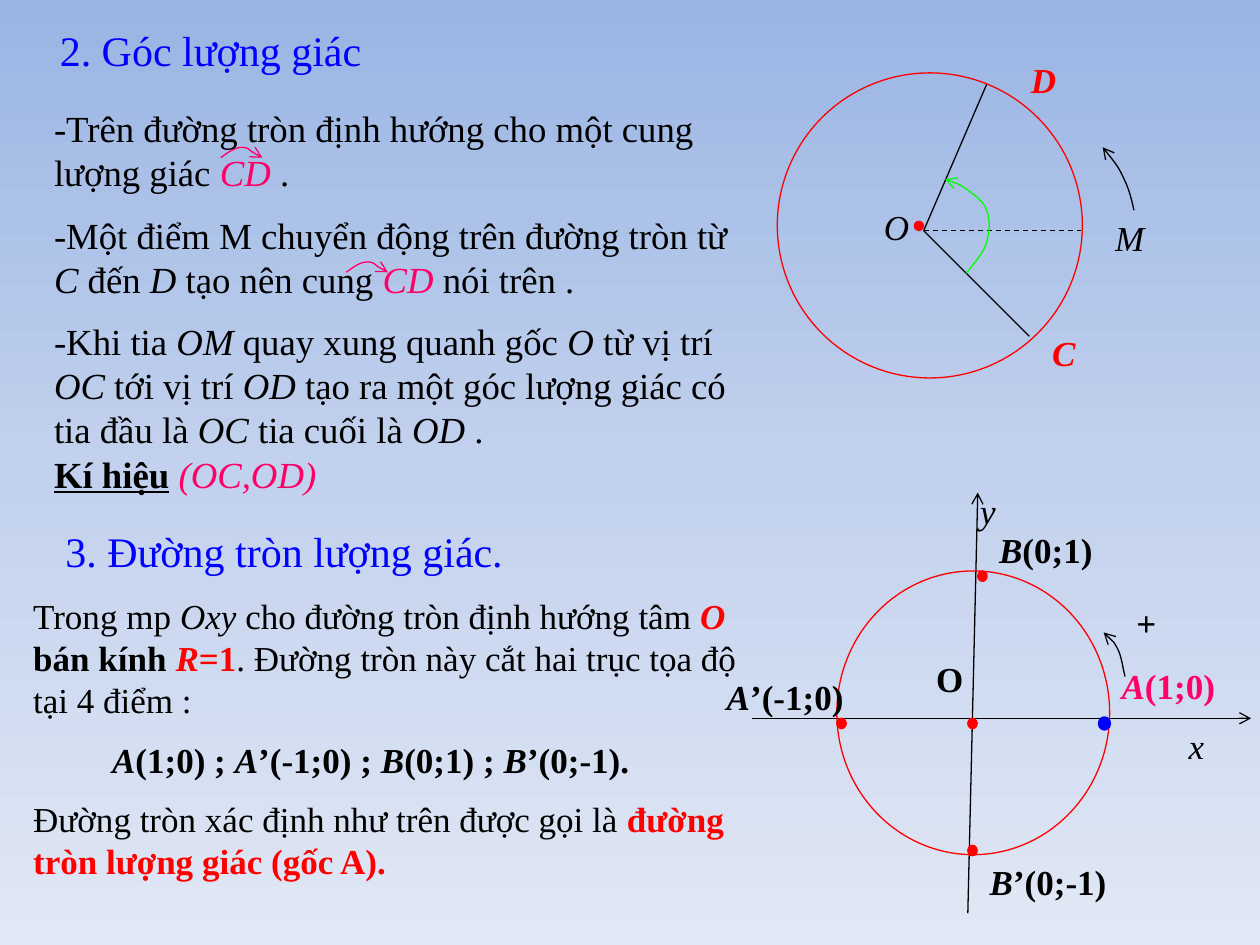
"""Build the slide on trigonometric angles and the unit circle."""
from copy import deepcopy
from dataclasses import dataclass
from typing import NamedTuple, Optional

from lxml import etree
from pptx import Presentation
from pptx.dml.color import RGBColor
from pptx.enum import dml, shapes, text
from pptx.oxml import ns
from pptx import util as u

BLACK = RGBColor(0x00, 0x00, 0x00)
BLUE = RGBColor(0x00, 0x00, 0xFF)
RED = RGBColor(0xFF, 0x00, 0x00)
PINK = RGBColor(0xFF, 0x00, 0x66)
GREEN = RGBColor(0x00, 0xFF, 0x00)
SKY = (RGBColor(0x9A, 0xB5, 0xE4), RGBColor(0xC2, 0xD1, 0xED), RGBColor(0xE1, 0xE8, 0xF5))
FONT = "Times New Roman"


class Run(NamedTuple):
    text: str
    color: RGBColor = BLACK
    bold: bool = False
    italic: bool = False
    underline: bool = False


@dataclass
class Block:
    left: float
    top: float
    width: float
    height: float
    paragraphs: list
    size: float = 20
    centered: bool = False


@dataclass
class Ellipse:
    left: float
    top: float
    width: float
    height: float
    fill: Optional[RGBColor] = None
    line: Optional[RGBColor] = RED
    weight: float = 0.75


@dataclass
class Segment:
    start: tuple
    end: tuple
    arrow: bool = False
    dashed: bool = False


@dataclass
class Curve:
    points: list
    color: RGBColor = BLACK


def var(letters: str, color: RGBColor = BLACK, bold: bool = False) -> Run:
    return Run(letters, color, bold, italic=True)


def strong(words: str, color: RGBColor = BLACK) -> Run:
    return Run(words, color, bold=True)


def point(name: str, rest: str, color: RGBColor = BLACK) -> list:
    return [var(name, color, True), strong(rest, color)]


def label(left: float, top: float, width: float, *runs: Run) -> Block:
    return Block(left, top, width, 1.1, [runs])


def add_run(paragraph, words: str, *, size: float, color: RGBColor, bold: bool = False,
            italic: bool = False, underline: bool = False) -> None:
    if words == "\n":
        paragraph.add_line_break()
        return
    run = paragraph.add_run()
    run.text = words
    font = run.font
    font.name, font.size = FONT, u.Pt(size)
    font.bold, font.italic, font.underline = bold, italic, underline
    font.color.rgb = color


def add_block(slide, block: Block) -> list:
    box = slide.shapes.add_textbox(*map(u.Cm, (block.left, block.top, block.width, block.height)))
    frame = box.text_frame
    frame.word_wrap = True
    if block.centered:
        frame.vertical_anchor = text.MSO_ANCHOR.MIDDLE
    paragraphs = []
    for index, runs in enumerate(block.paragraphs):
        paragraph = frame.add_paragraph() if index else frame.paragraphs[0]
        paragraph.space_before = u.Pt(block.size / 2 if index else 0)
        paragraph.alignment = text.PP_ALIGN.CENTER if block.centered else text.PP_ALIGN.LEFT
        for run in runs:
            add_run(paragraph, run.text, size=block.size, color=run.color, bold=run.bold,
                    italic=run.italic, underline=run.underline)
        paragraphs.append(paragraph)
    return paragraphs


def add_arrowhead(line) -> None:
    etree.SubElement(line._get_or_add_ln(), ns.qn("a:tailEnd"), type="arrow")


def add_ellipse(slide, ellipse: Ellipse) -> None:
    shape = slide.shapes.add_shape(
        shapes.MSO_SHAPE.OVAL,
        *map(u.Cm, (ellipse.left, ellipse.top, ellipse.width, ellipse.height)))
    shape.shadow.inherit = False
    if ellipse.fill is None:
        shape.fill.background()
    else:
        shape.fill.solid()
        shape.fill.fore_color.rgb = ellipse.fill
    if ellipse.line is None:
        shape.line.fill.background()
    else:
        shape.line.color.rgb = ellipse.line
        shape.line.width = u.Pt(ellipse.weight)


def add_segment(slide, segment: Segment) -> None:
    connector = slide.shapes.add_connector(
        shapes.MSO_CONNECTOR.STRAIGHT, *map(u.Cm, segment.start + segment.end))
    connector.line.color.rgb = BLACK
    connector.line.width = u.Pt(0.75)
    if segment.dashed:
        connector.line.dash_style = dml.MSO_LINE.DASH
    if segment.arrow:
        add_arrowhead(connector.line)
    etree.SubElement(connector._element.spPr, ns.qn("a:effectLst"))


def add_curve(slide, curve: Curve) -> None:
    start, *controls = [(u.Cm(x), u.Cm(y)) for x, y in curve.points]
    builder = slide.shapes.build_freeform(*start)
    builder.add_line_segments(controls, close=False)
    shape = builder.convert_to_shape()
    steps = list(shape._element.iter(ns.qn("a:lnTo")))
    outline = steps[0].getparent()
    for first in range(0, len(steps), 3):
        bezier = etree.SubElement(outline, ns.qn("a:cubicBezTo"))
        for step in steps[first:first + 3]:
            bezier.append(step[0])
            outline.remove(step)
    shape.shadow.inherit = False
    shape.fill.background()
    shape.line.color.rgb = curve.color
    shape.line.width = u.Pt(0.75)
    add_arrowhead(shape.line)


def paint_background(slide) -> None:
    fill = slide.background.fill
    fill.gradient()
    fill.gradient_angle = 270
    stop_list = next(slide._element.iter(ns.qn("a:gsLst")))
    stop_list.insert(1, deepcopy(stop_list[0]))
    for index, (stop, color) in enumerate(zip(fill.gradient_stops, SKY)):
        stop.position = index / 2
        stop.color.rgb = color


def arc_mark(left: float, top: float) -> Curve:
    wave = [(0, 0.21), (0.15, 0.1), (0.29, 0), (0.42, 0), (0.56, 0), (0.71, 0.18), (0.84, 0.21)]
    return Curve([(left + x, top + y) for x, y in wave], PINK)


def dot(left: float, top: float, color: RGBColor = RED, weight: float = 0.75) -> Ellipse:
    return Ellipse(left, top, 0.19, 0.21, color, color, weight)


ELLIPSES = [
    Ellipse(18.42, 4.45, 0.21, 0.21, RED, None), Ellipse(15.67, 1.47, 6.15, 6.15),
    Ellipse(16.87, 11.51, 5.5, 5.72),
    dot(19.71, 11.51), dot(19.51, 14.48), dot(22.17, 14.48, BLUE, 2.25),
    dot(19.51, 17.04), dot(16.87, 14.48),
]
CENTER = (18.62, 4.65)
SEGMENTS = [
    Segment(CENTER, (20.75, 6.78)), Segment((19.89, 1.7), CENTER),
    Segment(CENTER, (21.8, 4.65), dashed=True),
    Segment((15.16, 14.48), (25.22, 14.48), arrow=True),
    Segment((19.51, 18.41), (19.71, 9.93), arrow=True),
]
CURVES = [
    arc_mark(6.98, 5.28), arc_mark(4.45, 2.97),
    Curve([(22.86, 4.24), (22.81, 4.01), (22.76, 3.81), (22.66, 3.61),
           (22.56, 3.38), (22.38, 3.15), (22.23, 2.97)]),
    Curve([(19.48, 5.51), (19.66, 5.28), (19.84, 5.08), (19.89, 4.88), (19.96, 4.65),
           (19.96, 4.42), (19.89, 4.24), (19.84, 4.06), (19.61, 3.91), (19.48, 3.81),
           (19.33, 3.71), (19.2, 3.66), (19.05, 3.61)], GREEN),
    Curve([(22.68, 13.64), (22.63, 13.44), (22.61, 13.23), (22.53, 13.08),
           (22.45, 12.93), (22.35, 12.83), (22.25, 12.75)]),
]
BLOCKS = [
    Block(-0.2, 0.3, 8.89, 1.4, [[Run("2. Góc lượng giác", BLUE)]], 24, True),
    Block(1.07, 10.46, 13.97, 1.3, [[Run("3. Đường tròn lượng giác.", BLUE)]], 24),
    Block(0.84, 2.01, 14.17, 8.33, [
        [Run("-Trên đường tròn định hướng cho một cung lượng giác "), var("CD", PINK), Run(" .")],
        [Run("-Một điểm M chuyển động trên đường tròn từ "), var("C "), Run("đến "), var("D "),
         Run("tạo nên cung "), var("CD ", PINK), Run("nói trên .")],
        [Run("-Khi tia "), var("OM"), Run(" quay xung quanh gốc "), var("O "), Run("từ vị trí "),
         var("OC "), Run("tới vị trí "), var("OD "),
         Run("tạo ra một góc lượng giác có tia đầu là "), var("OC "), Run("tia cuối là "),
         var("OD"), Run(" ."), Run("\n"), Run("Kí hiệu", bold=True, underline=True),
         strong(" "), var("(OC,OD)", PINK)]], 21),
    label(20.96, 6.56, 1.7, var("C", RED, True)), label(20.53, 1.06, 1.7, var("D", RED, True)),
    label(22.23, 4.23, 1.48, var("M")), label(17.57, 4.02, 1.06, var("O")),
    label(18.62, 13.13, 1.48, strong("O")), label(22.66, 12.01, 0.84, strong("+")),
    label(23.71, 14.48, 1.32, var("x")), label(19.51, 9.74, 1.32, var("y")),
    label(22.36, 13.28, 3.05, *point("A", "(1;0)", PINK)),
    label(14.4, 13.49, 3.05, *point("A", "’(-1;0)")),
    label(19.89, 10.52, 2.46, *point("B", "(0;1)")),
    label(19.7, 17.22, 3.05, *point("B", "’(0;-1)")),
]
UNIT_CIRCLE = Block(0.42, 11.86, 14.82, 6.25, [
    [Run("Trong mp "), var("Oxy "), Run("cho đường tròn định hướng tâm "), var("O ", RED, True),
     strong("bán kính "), *point("R", "=1", RED),
     Run(". Đường tròn này cắt hai trục tọa độ tại 4 điểm :")],
    [*point("A", "(1;0) ; "), *point("A", "’(-1;0) ; "), *point("B", "(0;1) ; "),
     *point("B", "’(0;-1).")],
    [Run("Đường tròn xác định như trên được gọi là "),
     strong("đường tròn lượng giác (gốc A).", RED)]])


def main() -> None:
    presentation = Presentation()
    presentation.slide_width, presentation.slide_height = u.Cm(25.4), u.Cm(19.05)
    slide = presentation.slides.add_slide(presentation.slide_layouts[6])
    paint_background(slide)
    for items, draw in ((SEGMENTS, add_segment), (ELLIPSES, add_ellipse),
                        (CURVES, add_curve), (BLOCKS, add_block)):
        for item in items:
            draw(slide, item)
    coordinates = add_block(slide, UNIT_CIRCLE)[1]
    coordinates._p.get_or_add_pPr().set("marL", str(u.Cm(1.59)))
    presentation.save("out.pptx")


if __name__ == "__main__":
    main()
